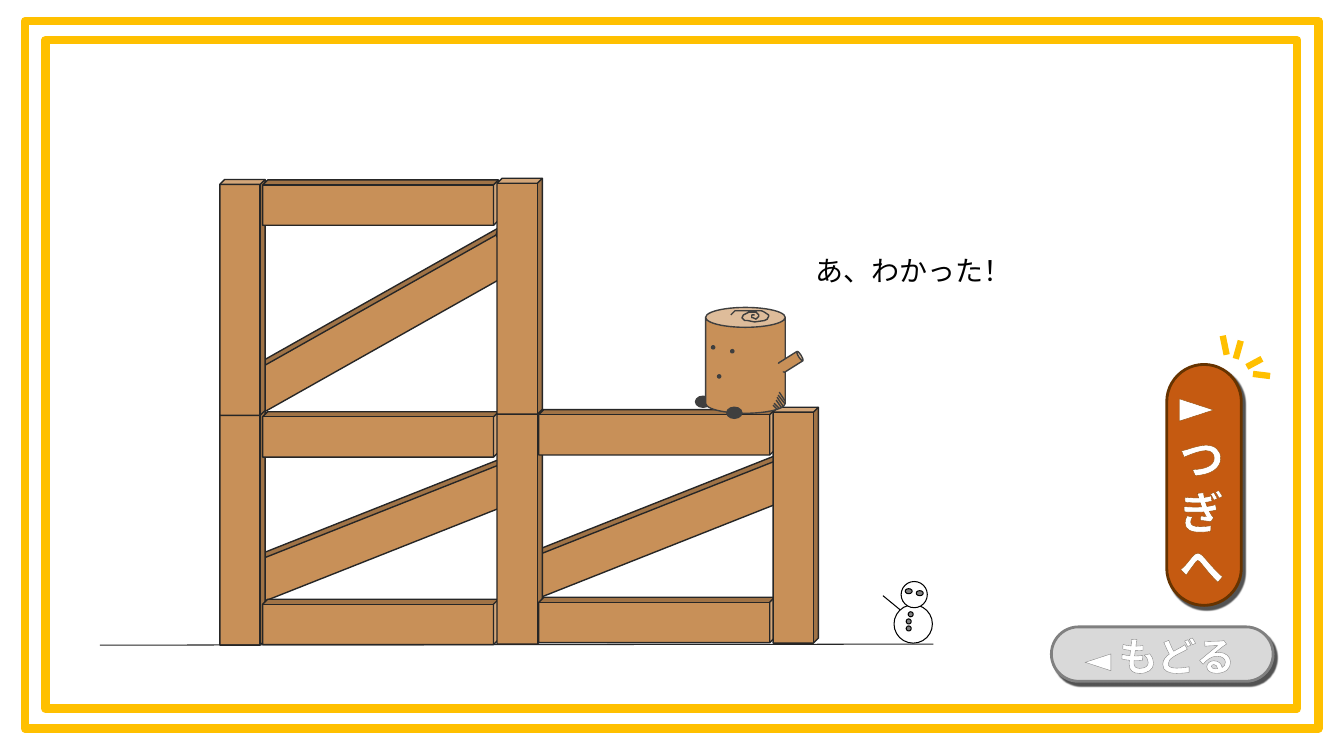
from lxml import etree
from pptx import Presentation
from pptx.dml.color import RGBColor
from pptx.enum.shapes import MSO_CONNECTOR, MSO_SHAPE
from pptx.enum.text import MSO_ANCHOR, MSO_AUTO_SIZE, PP_ALIGN
from pptx.oxml.ns import qn
from pptx.util import Pt

CUBE, CAN, OVAL = MSO_SHAPE.CUBE, MSO_SHAPE.CAN, MSO_SHAPE.OVAL
RECT, PILL = MSO_SHAPE.RECTANGLE, MSO_SHAPE.ROUNDED_RECTANGLE
STRAIGHT = MSO_CONNECTOR.STRAIGHT
CENTER, LEFT = PP_ALIGN.CENTER, PP_ALIGN.LEFT
MIDDLE, TOP = MSO_ANCHOR.MIDDLE, MSO_ANCHOR.TOP
GROW = MSO_AUTO_SIZE.SHAPE_TO_FIT_TEXT

COLORS = {
    "wood": "C89058", "edge": "262626", "dark": "3F3F3F", "gold": "FFC000",
    "black": "000000", "white": "FFFFFF", "gray": "808080", "light": "D9D9D9",
    "orange": "C55A11", "brown": "663300", "rust": "8E4700",
}
CJK = "Noto Sans CJK JP"


def rgb(name):
    return RGBColor.from_string(COLORS[name])


class Canvas:
    def __init__(self, slide):
        self.slide = slide
        self.shapes = slide.shapes

    def group(self):
        """Send the next elements to a new group."""
        self.shapes = self.slide.shapes.add_group_shape().shapes

    def ungroup(self):
        self.shapes = self.slide.shapes

    def paint(self, sp, fill, line, width):
        sp.shadow.inherit = False
        if fill:
            sp.fill.solid()
            sp.fill.fore_color.rgb = rgb(fill)
        else:
            sp.fill.background()
        if line:
            sp.line.color.rgb = rgb(line)
            sp.line.width = Pt(width)
        else:
            sp.line.fill.background()

    def shape(self, kind, box, fill=None, line=None, width=1, rot=0, adj=None, flip=False):
        sp = self.shapes.add_shape(kind, *map(Pt, box))
        self.paint(sp, fill, line, width)
        sp.rotation = rot
        if adj is not None:
            sp.adjustments[0] = adj
        if flip:
            sp._element.spPr.find(qn("a:xfrm")).set("flipV", "1")
        return sp

    def line(self, x1, y1, x2, y2, color, width):
        c = self.shapes.add_connector(STRAIGHT, Pt(x1), Pt(y1), Pt(x2), Pt(y2))
        c.line.color.rgb = rgb(color)
        c.line.width = Pt(width)
        etree.SubElement(c._element.spPr, qn("a:effectLst"))

    def curve(self, points, color):
        builder = self.shapes.build_freeform(*points[0], scale=Pt(1))
        builder.add_line_segments(points[1:], close=False)
        self.paint(builder.convert_to_shape(), None, color, 1)

    def button(self, box, fill, line, rot=0):
        sp = self.shape(PILL, box, fill, line, 2, rot, 0.5)
        effects = sp._element.spPr.find(qn("a:effectLst"))
        shadow = etree.SubElement(effects, qn("a:outerShdw"), blurRad=str(Pt(1)), dist=str(Pt(3)),
                                  dir=str(50 * 60000), algn="tl", rotWithShape="0")
        color = etree.SubElement(shadow, qn("a:srgbClr"), val=COLORS["black"])
        etree.SubElement(color, qn("a:alpha"), val="68000")

    def text(self, box, runs, color, font, bold=False, outline=None, align=LEFT,
             anchor=TOP, vert=None):
        """Each run is (text, size, outline width)."""
        tf = self.shapes.add_textbox(*map(Pt, box)).text_frame
        tf.word_wrap = True
        tf.auto_size = GROW
        tf.vertical_anchor = anchor
        if vert:
            tf._txBody.bodyPr.set("vert", vert)
        p = tf.paragraphs[0]
        p.alignment = align
        for words, size, edge in runs:
            r = p.add_run()
            r.text = words
            r.font.size, r.font.bold, r.font.name = Pt(size), bold, font
            r.font.color.rgb = rgb(color)
            rPr = r.font._element
            etree.SubElement(rPr, qn("a:ea"), typeface=font)
            if outline:
                ln = etree.Element(qn("a:ln"), w=str(Pt(edge)))
                solid = etree.SubElement(ln, qn("a:solidFill"))
                etree.SubElement(solid, qn("a:srgbClr"), val=COLORS[outline])
                rPr.insert(0, ln)


prs = Presentation()
prs.slide_width, prs.slide_height = Pt(960), Pt(540)
s = Canvas(prs.slides.add_slide(prs.slide_layouts[6]))


# Wooden frame, from back to front
def beam(x, y, length, rot=0):
    s.shape(CUBE, (x, y, 32.4, length), "wood", "edge", 1, rot, 0.11, flip=rot != 0)


POST, BRACE = 168.5, 212.4
for x, y, rot in [(450, 271.4, 248.4), (250.6, 275, 248.4), (254.9, 123.1, 240.6)]:
    beam(x, y, BRACE, rot)
beam(157, 292.3, POST)

# Double border
for box in [(18, 15.1, 923.8, 505.4), (32.4, 28.8, 894.2, 477.4)]:
    s.shape(RECT, box, None, "gold", 6)

# Posts upright, rails turned on their side
beam(157, 128.2, POST)
for y in (360, 226.1, 60.5):
    beam(255.6, y, POST, 270)
for y in (291.6, 127.4):
    beam(355, y, POST)
for y in (358.6, 224.6):
    beam(452.9, y, POST, 270)
beam(552.2, 290.9, POST)

# Stump figure
s.group()
s.shape(OVAL, (496.8, 283, 10.8, 7.9), "dark", "dark")
s.shape(CAN, (504, 219.6, 56.9, 75.6), "wood", "dark", adj=0.25)
for x, y in [(522, 249.8), (508.3, 247), (512.6, 267.8)]:
    s.shape(OVAL, (x, y, 2.2, 2.2), "dark", "dark")
s.shape(OVAL, (519.1, 290.9, 10.8, 7.9), "dark", "dark")
for ends in [(556.6, 280.1, 560.9, 286.6), (555.8, 282.2, 560.9, 288.7),
             (555.1, 283.7, 559.4, 290.2), (554.4, 285.8, 558, 290.9),
             (553, 288, 556.6, 291.6), (552.2, 289.4, 555.1, 292.3)]:
    s.line(*ends, "dark", 1)
s.curve([(538.6, 225.4), (537.1, 225.4), (537.1, 226.6), (537.8, 227), (540, 227.5),
         (541.4, 226.8), (542.2, 226.1), (542.2, 224.6), (541.4, 223.9), (540, 223.2),
         (535, 223.2), (532.8, 223.9), (530.6, 225.4), (529.9, 226.8), (530.6, 228.2),
         (532.1, 229), (534.2, 229.3), (538.6, 229.7), (545.8, 229), (547.9, 228.2),
         (548.6, 226.1), (548.6, 224.6), (546.5, 223.2), (544.3, 222.5), (539.3, 222.3),
         (535.7, 221.8), (527.8, 221.8), (524.9, 222.5), (522.7, 223.9), (522, 225.4)], "dark")
s.shape(CAN, (560.9, 249.8, 7.9, 17.3), "wood", "dark", rot=57.8, adj=0.25)
s.shape(OVAL, (550.8, 259.9, 10.8, 6.5), "wood", rot=349.3)
s.ungroup()

# Ground and speech
s.line(71.3, 460.8, 666.7, 460.1, "edge", 0.75)
s.text((575.3, 177.8, 169.9, 31.7), [("あ、わかった！", 20, 0)], "black", "Arial")

# Snowman: body, head, buttons, eyes, arm
s.group()
for x, y, w, h, fill in [(638.6, 432, 27.4, 27.4, "white"), (643.7, 415.4, 18.7, 18.7, "white"),
                         (648.7, 437, 3.6, 3.6, "gray"), (647.3, 447.1, 3.6, 3.6, "gray"),
                         (647.3, 442.1, 3.6, 3.6, "gray"), (646.6, 420.5, 5, 3.6, "gray"),
                         (654.5, 421.9, 5, 3.6, "gray")]:
    s.shape(OVAL, (x, y, w, h), fill, "black", 0.75)
s.line(643, 435.6, 630.7, 425.5, "black", 0.75)
s.ungroup()

# Next button with sparkle
s.button((774, 319.7, 172.1, 53.3), "orange", "brown", 270)
s.text((835.2, 259.9, 52.6, 172.1), [("►つぎへ", 32, 1)], "white", CJK, True, "rust",
       anchor=MIDDLE, vert="wordArtVertRtl")
s.group()
for ends in [(873.4, 239.8, 876.2, 253.4), (886.3, 243.4, 882.7, 256.3),
             (907.2, 268.6, 895, 267.1), (901.4, 256.3, 890.6, 262.1)]:
    s.line(*ends, "gold", 4.5)
s.ungroup()

# Back button
s.button((751, 447.8, 158.4, 38.9), "light", "gray")
s.text((749.5, 447.8, 158.4, 41), [("◄ ", 24, 1), ("もどる", 28, 1.5)], "white", CJK, True,
       "gray", align=CENTER)

prs.save("out.pptx")
